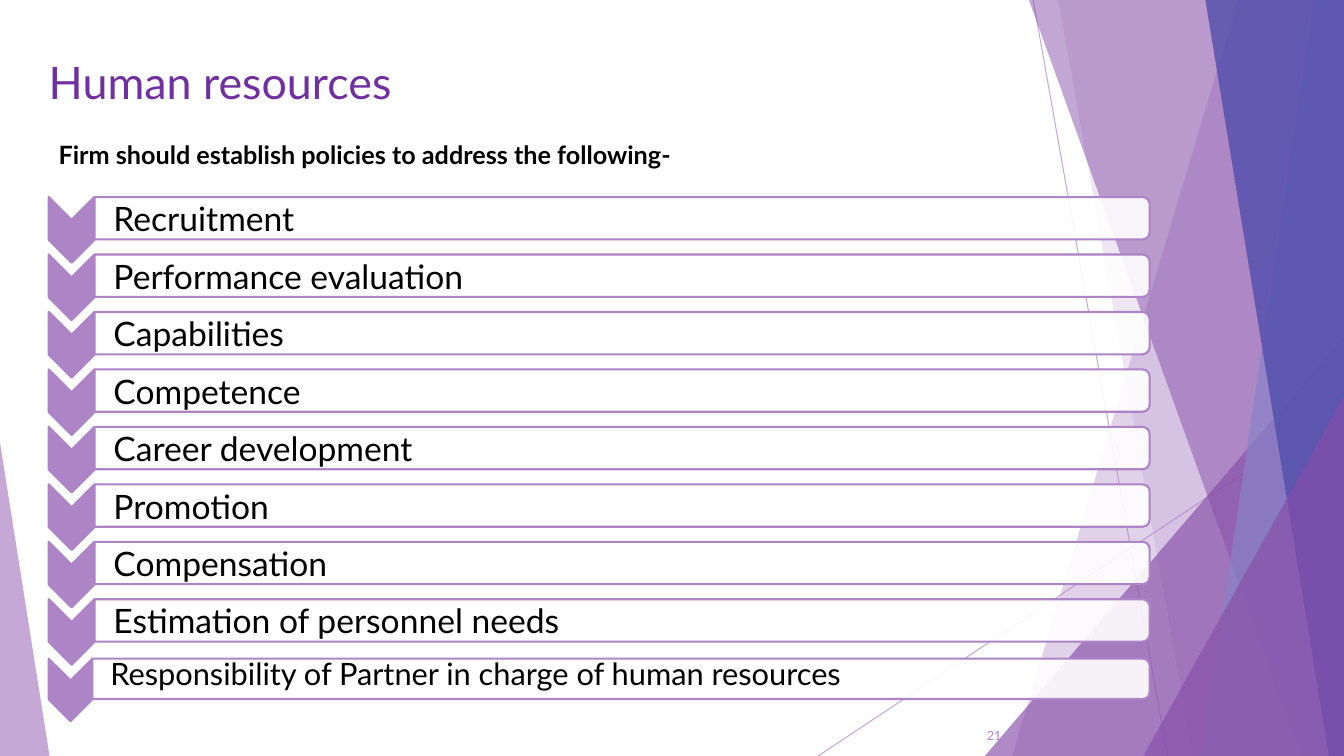
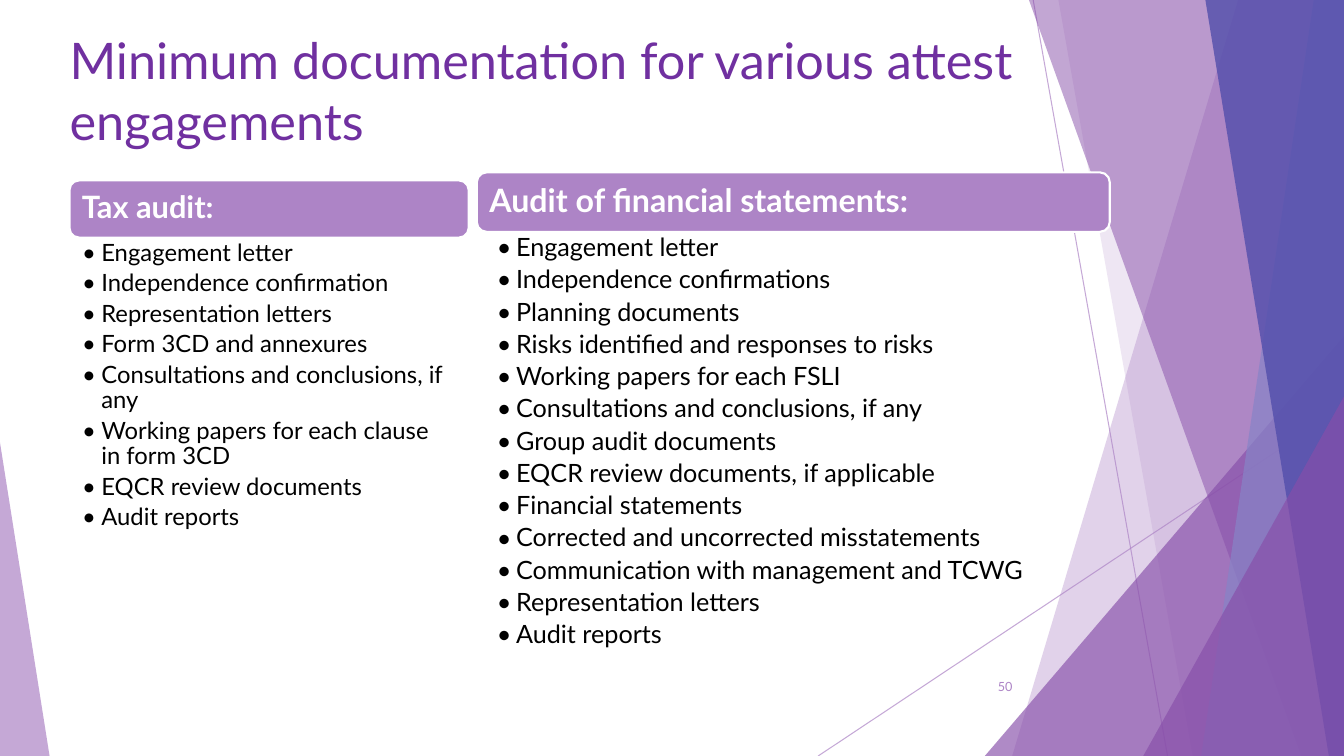
import pptx
import pptx.util
import pptx.dml.color
import pptx.enum.shapes
import pptx.enum.text
import pptx.oxml.ns
from lxml import etree

# Grid: 160 columns by 90 rows of square cells, 6 points each
COLUMNS, ROWS = 160, 90
CELL = pptx.util.Pt(6)
FONT = "Lato"
COLORS = {
    "lilac": "AD84C6",
    "plum": "874EA9",
    "periwinkle": "8784C7",
    "indigo": "524EAB",
    "title": "7030A0",
    "text": "000000",
    "white": "FFFFFF",
}
SHAPE = pptx.enum.shapes.MSO_SHAPE
ANCHOR = pptx.enum.text.MSO_ANCHOR
ALIGN = pptx.enum.text.PP_ALIGN
qn = pptx.oxml.ns.qn


def cells(*counts):
    return [round(count * CELL) for count in counts]


def rgb(name):
    return pptx.dml.color.RGBColor.from_string(COLORS[name])


# Formatting helpers
def set_opacity(shape, percent):
    color = next(shape.element.spPr.iter(qn("a:srgbClr")))
    etree.SubElement(color, qn("a:alpha")).set("val", str(percent * 1000))


def paint(shape, fill, opacity=100, line=None):
    shape.shadow.inherit = False
    shape.fill.solid()
    shape.fill.fore_color.rgb = rgb(fill)
    if opacity < 100:
        set_opacity(shape, opacity)
    if line:
        shape.line.color.rgb = rgb(line)
        shape.line.width = pptx.util.Pt(1.5)
    else:
        shape.line.fill.background()
    return shape


def set_frame(shape, insets, anchor=ANCHOR.TOP):
    frame = shape.text_frame
    frame.word_wrap = True
    frame.auto_size = pptx.enum.text.MSO_AUTO_SIZE.NONE
    frame.vertical_anchor = anchor
    (frame.margin_left, frame.margin_top,
     frame.margin_right, frame.margin_bottom) = cells(*insets)
    return frame


def write(paragraph, words, size, color="text", bold=False, align=ALIGN.LEFT):
    paragraph.text = words
    paragraph.alignment = align
    font = paragraph.font
    font.name, font.size, font.bold = FONT, pptx.util.Pt(size), bold
    font.color.rgb = rgb(color)


def add_label(slide, box, words, size, insets=(1.2, 0.6, 1.2, 0.6),
              anchor=ANCHOR.TOP, **style):
    label = slide.shapes.add_textbox(*cells(*box))
    write(set_frame(label, insets, anchor).paragraphs[0], words, size, **style)


def add_turned(slide, kind, box):
    """Add a shape turned a quarter clockwise that ends up filling the box."""
    left, top, width, height = box
    shape = slide.shapes.add_shape(kind, *cells(
        left + (width - height) / 2, top + (height - width) / 2, height, width))
    shape.rotation = 90
    return shape


# Shared backdrop: thin lines, slanted bands and corner triangles
def add_backdrop(slide):
    for ends in ((123, 0, 139, ROWS), (COLUMNS, 48.4, 97.4, ROWS)):
        ray = slide.shapes.add_connector(
            pptx.enum.shapes.MSO_CONNECTOR.STRAIGHT, *cells(*ends))
        ray.line.color.rgb = rgb("lilac")
        ray.line.width = pptx.util.Pt(0.75)
        set_opacity(ray, 70)
        etree.SubElement(ray.element.spPr, qn("a:effectLst"))

    def band(top_left, bottom_left, color, opacity):
        outline = slide.shapes.build_freeform(*cells(top_left, 0), scale=1.0)
        outline.add_line_segments([cells(*corner) for corner in (
            (COLUMNS, 0), (COLUMNS, ROWS), (bottom_left, ROWS))], close=True)
        paint(outline.convert_to_shape(), color, opacity)

    def corner(left, top, width, apex, color, opacity):
        triangle = slide.shapes.add_shape(
            SHAPE.ISOSCELES_TRIANGLE, *cells(left, top, width, ROWS - top))
        triangle.adjustments[0] = apex
        paint(triangle, color, opacity)

    band(147.4, 120.5, "lilac", 36)
    band(126, 142, "lilac", 20)
    corner(117.24, 40, 42.76, 1, "plum", 66)
    band(122.5, 154.9, "plum", 50)
    band(156.4, 143, "periwinkle", 70)
    band(143.5, 158.2, "indigo", 80)
    corner(136.1, 47.2, 23.9, 1, "plum", 66)
    corner(0, 52.7, 5.9, 0, "lilac", 70)


def start_slide(deck, title, title_box, title_size, number, number_at):
    slide = deck.slides.add_slide(deck.slide_layouts[5])
    add_backdrop(slide)
    heading = slide.shapes.title
    heading.left, heading.top, heading.width, heading.height = cells(*title_box)
    write(set_frame(heading, (0, 0, 0, 0)).paragraphs[0], title, title_size,
          color="title")
    add_label(slide, (*number_at, 9, 4.8), number, 9, anchor=ANCHOR.MIDDLE,
              color="lilac", align=ALIGN.RIGHT)
    return slide


# Policy row: a downward chevron followed by a rounded bar
def add_policy(slide, box, words, size, text_height):
    left, top, width, height = box
    chevron_width = 1.08 * height
    bar_left, bar_width = left + chevron_width, width - chevron_width
    chevron = add_turned(slide, SHAPE.CHEVRON,
                         (left, top, chevron_width, 1.55 * height))
    paint(chevron, "lilac", line="lilac")
    bar = add_turned(slide, SHAPE.ROUND_2_SAME_RECTANGLE,
                     (bar_left, top, bar_width, height))
    paint(bar, "white", 90, line="lilac")
    add_label(slide, (bar_left, top, bar_width, text_height), words, size,
              insets=(0.45 * height, 0.24, 0.24, 0.24), anchor=ANCHOR.MIDDLE)


# Documentation column: a rounded header above a bulleted list
def add_documents(slide, box, header_height, header, header_size,
                  items, size, list_inset):
    left, top, width, height = box
    banner = paint(slide.shapes.add_shape(
        SHAPE.ROUNDED_RECTANGLE, *cells(left, top, width, header_height)),
        "lilac", line="white")
    frame = set_frame(banner, (1.15,) * 4, ANCHOR.MIDDLE)
    write(frame.paragraphs[0], header, header_size, color="white", bold=True)
    frame.paragraphs[0].line_spacing = 0.9

    documents = slide.shapes.add_textbox(
        *cells(left, top + header_height, width, height - header_height))
    frame = set_frame(documents, (list_inset, 0.36, 2.1, 0.36))
    indent = cells(2.28)[0]
    for index, item in enumerate(items):
        paragraph = frame.add_paragraph() if index else frame.paragraphs[0]
        write(paragraph, item, size)
        paragraph.line_spacing = 0.9
        paragraph.space_after = pptx.util.Pt(0.2 * size)
        properties = paragraph._p.get_or_add_pPr()
        properties.set("marL", str(indent))
        properties.set("indent", str(-indent))
        bullet_font = etree.Element(qn("a:buFont"), typeface=FONT)
        bullet = etree.Element(qn("a:buChar"), char="•")
        defaults = properties.find(qn("a:defRPr"))
        defaults.addprevious(bullet_font)
        defaults.addprevious(bullet)


POLICIES = [
    "Recruitment", "Performance evaluation", "Capabilities", "Competence",
    "Career development", "Promotion", "Compensation",
    "Estimation of personnel needs",
]
TAX_DOCUMENTS = [
    "Engagement letter", "Independence confirmation",
    "Representation letters", "Form 3CD and annexures",
    "Consultations and conclusions, if any",
    "Working papers for each clause in form 3CD",
    "EQCR review documents", "Audit reports",
]
STATEMENT_DOCUMENTS = [
    "Engagement letter", "Independence confirmations", "Planning documents",
    "Risks identified and responses to risks",
    "Working papers for each FSLI",
    "Consultations and conclusions, if any", "Group audit documents",
    "EQCR review documents, if applicable", "Financial statements",
    "Corrected and uncorrected misstatements",
    "Communication with management and TCWG",
    "Representation letters", "Audit reports",
]


def build_human_resources(deck):
    slide = start_slide(deck, "Human resources", (5.8, 6.5, 112.8, 10.8), 32,
                        "21", (111.4, 85.2))
    add_label(slide, (5.8, 16, 120.5, 4.8),
              "Firm should establish policies to address the following-", 18,
              bold=True)
    left, top, width, height, pitch = 5.8, 23.46, 131.06, 5.04, 6.84
    for index, policy in enumerate(POLICIES):
        add_policy(slide, (left, top + index * pitch, width, height),
                   policy, 24, height)
    add_policy(slide, (left, 78.42, width, 4.8),
               "Responsibility of Partner in charge of human resources", 22, 3.4)


def build_documentation(deck):
    slide = start_slide(
        deck, "Minimum documentation for various attest engagements",
        (8.28, 3.5, 114.8, 10.8), 36, "50", (112.7, 79.3))
    add_documents(slide, (8.28, 21.48, 47.52, 50.7), 6.8,
                  "Tax audit:", 22, TAX_DOCUMENTS, 17, 1.5)
    add_documents(slide, (56.76, 20.52, 75.36, 57.1), 7.08,
                  "Audit of financial statements:", 23,
                  STATEMENT_DOCUMENTS, 18, 2.4)


def main():
    deck = pptx.Presentation()
    deck.slide_width, deck.slide_height = cells(COLUMNS, ROWS)
    build_human_resources(deck)
    build_documentation(deck)
    deck.save("out.pptx")


if __name__ == "__main__":
    main()
